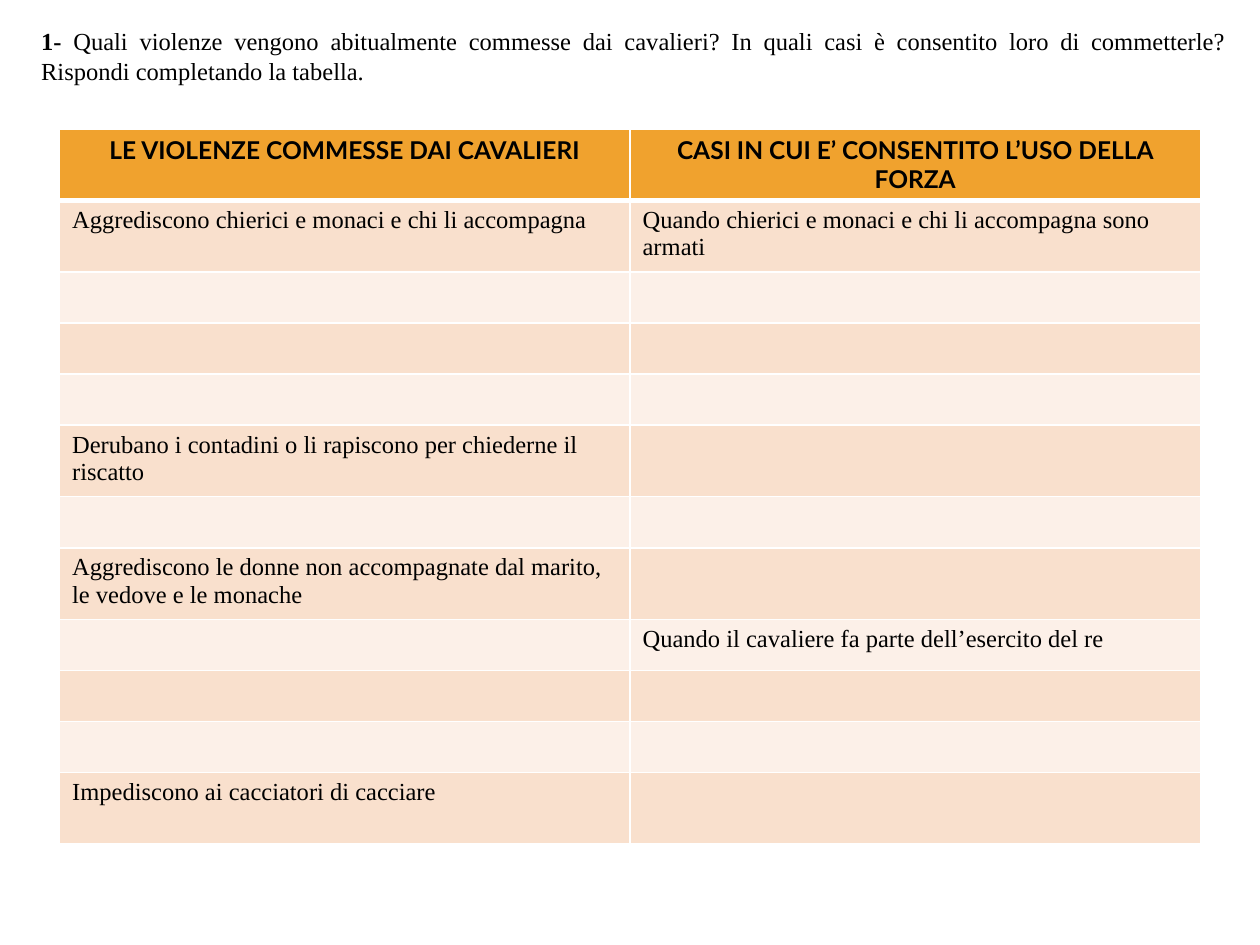
from lxml import etree
from pptx import Presentation
from pptx.dml.color import RGBColor
from pptx.enum.text import MSO_AUTO_SIZE, PP_ALIGN
from pptx.oxml.ns import qn
from pptx.util import Cm, Pt

CENTER, JUSTIFY, LEFT = PP_ALIGN.CENTER, PP_ALIGN.JUSTIFY, PP_ALIGN.LEFT
FIT_SHAPE = MSO_AUTO_SIZE.SHAPE_TO_FIT_TEXT

BLACK = RGBColor(0x00, 0x00, 0x00)
WHITE = RGBColor(0xFF, 0xFF, 0xFF)
ORANGE = RGBColor(0xF0, 0xA2, 0x2E)
PEACH = RGBColor(0xF9, 0xE0, 0xCD)
CREAM = RGBColor(0xFC, 0xF0, 0xE8)
SERIF, SANS = "Times New Roman", "Lato"

QUESTION = [
    ("1- ", True),
    ("Quali violenze vengono abitualmente commesse dai cavalieri? In quali casi "
     "è consentito loro di commetterle? Rispondi completando la tabella.", False),
]
SHORT, TALL = 1.03, 1.43
ROWS = [
    (TALL, "LE VIOLENZE COMMESSE DAI CAVALIERI",
     "CASI IN CUI E’ CONSENTITO L’USO DELLA FORZA"),
    (TALL, "Aggrediscono chierici e monaci e chi li accompagna",
     "Quando chierici e monaci e chi li accompagna sono armati"),
    (SHORT, "", ""),
    (SHORT, "", ""),
    (SHORT, "", ""),
    (TALL, "Derubano i contadini o li rapiscono per chiederne il riscatto", ""),
    (SHORT, "", ""),
    (TALL, "Aggrediscono le donne non accompagnate dal marito, "
           "le vedove e le monache", ""),
    (SHORT, "", "Quando il cavaliere fa parte dell’esercito del re"),
    (SHORT, "", ""),
    (SHORT, "", ""),
    (TALL, "Impediscono ai cacciatori di cacciare", ""),
]


def add_run(p, text, font, bold):
    r = p.add_run()
    r.text = text
    r.font.name = font
    r.font.size = Pt(14)
    r.font.bold = bold
    r.font.color.rgb = BLACK


def set_borders(cell, widths):
    tcPr = cell._tc.get_or_add_tcPr()
    for i, (side, width) in enumerate(widths.items()):
        ln = etree.Element(qn(f"a:ln{side}"), w=str(Pt(width)))
        fill = etree.SubElement(ln, qn("a:solidFill"))
        etree.SubElement(fill, qn("a:srgbClr"), val=str(WHITE))
        tcPr.insert(i, ln)


def add_question(s):
    tf = s.shapes.add_textbox(Cm(0.58), Cm(0.41), Cm(24.4), Cm(1.45)).text_frame
    tf.word_wrap = True
    tf.auto_size = FIT_SHAPE
    p = tf.paragraphs[0]
    p.alignment = JUSTIFY
    for text, bold in QUESTION:
        add_run(p, text, SERIF, bold)


def add_answers(s):
    height = sum(row[0] for row in ROWS)
    table = s.shapes.add_table(len(ROWS), 2, Cm(1.2), Cm(2.6),
                               Cm(23), Cm(height)).table
    for i, (row_height, *texts) in enumerate(ROWS):
        table.rows[i].height = Cm(row_height)
        header = i == 0
        fill = ORANGE if header else (CREAM, PEACH)[i % 2]
        for j, text in enumerate(texts):
            cell = table.cell(i, j)
            cell.fill.solid()
            cell.fill.fore_color.rgb = fill
            set_borders(cell, {"L": 1, "R": 1, "T": 3 if i == 1 else 1,
                               "B": 3 if header else 1})
            if text:
                p = cell.text_frame.paragraphs[0]
                p.alignment = CENTER if header else LEFT
                add_run(p, text, SANS if header else SERIF, header)


def main():
    prs = Presentation()
    prs.slide_width, prs.slide_height = Cm(25.4), Cm(19.05)
    s = prs.slides.add_slide(prs.slide_layouts[6])
    add_question(s)
    add_answers(s)
    prs.save("out.pptx")


if __name__ == "__main__":
    main()
